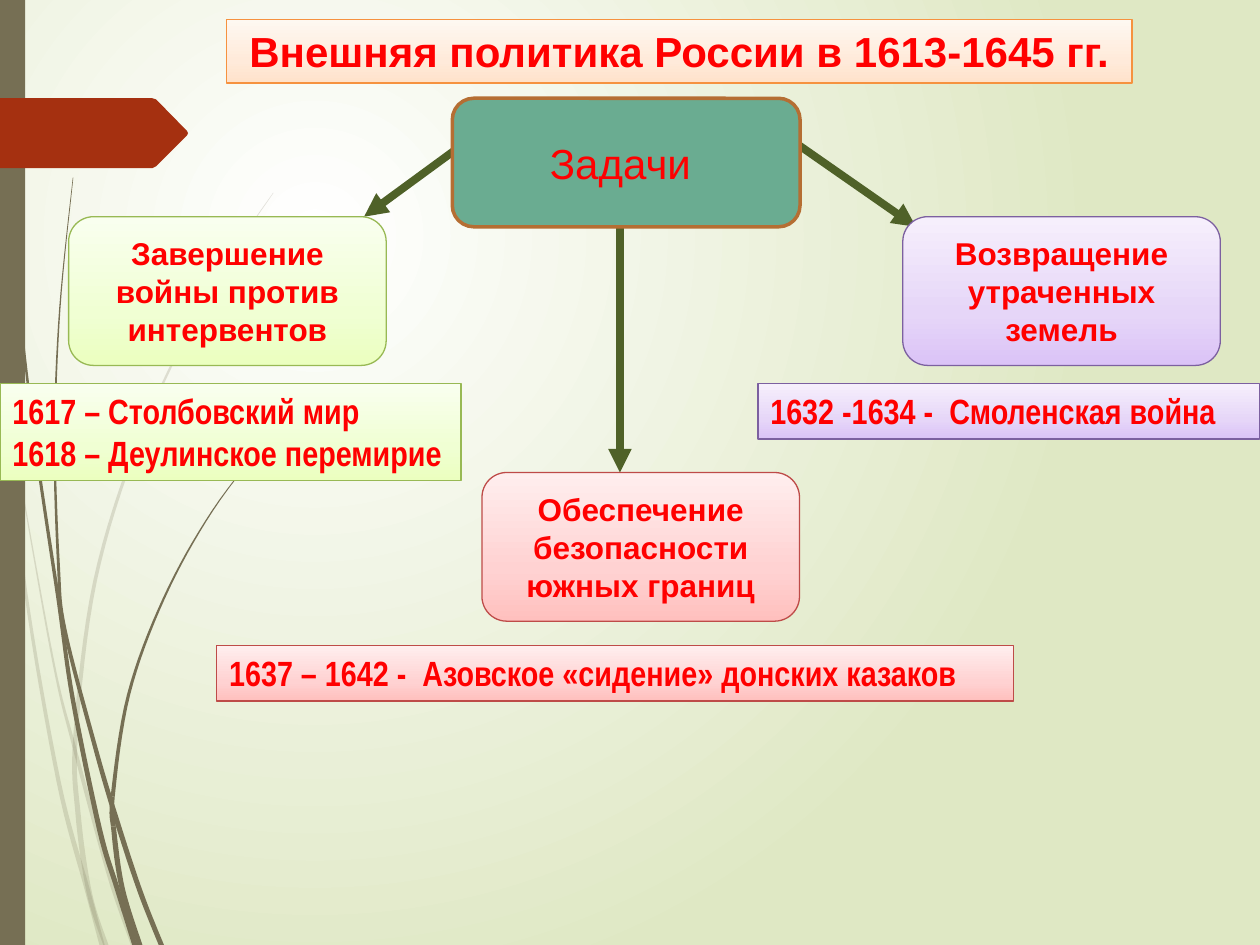
import dataclasses

import lxml.etree
import pptx
import pptx.dml.color
import pptx.enum.shapes
import pptx.enum.text
import pptx.oxml.ns
import pptx.util

SHAPES = pptx.enum.shapes.MSO_SHAPE
ALIGN = pptx.enum.text.PP_ALIGN
ANCHOR = pptx.enum.text.MSO_ANCHOR
COLUMN = pptx.util.Inches(0.1)  # the grid has 100 columns and 75 square rows


@dataclasses.dataclass(frozen=True)
class Palette:
    """Gradient stops from bottom to top, and the outline colour."""
    stops: tuple
    line: str


@dataclasses.dataclass(frozen=True)
class Theme:
    font: str = "Arial"
    narrow_font: str = "Arial Narrow"
    heading_size: int = 24
    event_size: int = 20
    task_size: int = 18
    text: str = "FF0000"
    background: tuple = ((0, "FFFFFF"), (100, "DFE8C4"))
    wisp: str = "766F54"
    tag: str = "A53010"
    arrow: str = "4F6128"
    root_fill: str = "6AAC91"
    root_line: str = "B56E33"
    orange: Palette = Palette(((0, "FFE2CA"), (35, "FFEADA"), (100, "FEF8F1")), "F6923F")
    green: Palette = Palette(((0, "EBFFBF"), (35, "F0FFD3"), (100, "F9FFEF")), "98B954")
    purple: Palette = Palette(((0, "DBC3F7"), (35, "E6D6F8"), (100, "F6EFFC")), "7C60A0")
    red: Palette = Palette(((0, "FFC0BE"), (35, "FFD2D2"), (100, "FFEEEE")), "BE4B48")


THEME = Theme()


@dataclasses.dataclass(frozen=True)
class Box:
    """A rectangle in grid columns and rows."""
    left: float
    top: float
    width: float
    height: float

    def inside(self, left, top, width, height):
        return Box(self.left + left, self.top + top, width, height)

    def point(self, x, y):
        return round((self.left + x) * COLUMN), round((self.top + y) * COLUMN)

    def lengths(self):
        return [round(n * COLUMN) for n in (self.left, self.top, self.width, self.height)]


def rgb(color):
    return pptx.dml.color.RGBColor.from_string(color)


def add_child(parent, tag, **attributes):
    child = lxml.etree.SubElement(parent, pptx.oxml.ns.qn(tag))
    for name, value in attributes.items():
        child.set(name, str(value))
    return child


def set_gradient(fill, owner, stops, radial=False):
    """Give the fill its stops: upwards, or round a centre in the upper left."""
    fill.gradient()
    gradient = next(owner.iter(pptx.oxml.ns.qn("a:gradFill")))
    for child in list(gradient):
        gradient.remove(child)
    stop_list = add_child(gradient, "a:gsLst")
    for position, color in stops:
        stop = add_child(stop_list, "a:gs", pos=position * 1000)
        add_child(stop, "a:srgbClr", val=color)
    if radial:
        circle = add_child(gradient, "a:path", path="circle")
        add_child(circle, "a:fillToRect", l=50000, t=50000, r=100000, b=100000)
    else:
        add_child(gradient, "a:lin", ang=270 * 60000, scaled=1)


def set_solid(shape, color, opacity=100):
    shape.shadow.inherit = False
    shape.line.fill.background()
    shape.fill.solid()
    shape.fill.fore_color.rgb = rgb(color)
    if opacity < 100:
        fill_color = next(shape.element.spPr.iter(pptx.oxml.ns.qn("a:srgbClr")))
        add_child(fill_color, "a:alpha", val=opacity * 1000)


def add_panel(slide, box, kind, palette):
    shape = slide.shapes.add_shape(kind, *box.lengths())
    shape.shadow.inherit = False
    set_gradient(shape.fill, shape.element, palette.stops)
    shape.line.color.rgb = rgb(palette.line)
    shape.line.width = pptx.util.Pt(0.75)
    return shape


def write(shape, text, size, bold=True, font=THEME.font, align=ALIGN.CENTER, anchor=ANCHOR.MIDDLE):
    frame = shape.text_frame
    frame.word_wrap = True
    frame.vertical_anchor = anchor
    frame.text = text
    for paragraph in frame.paragraphs:
        paragraph.alignment = align
        for run in paragraph.runs:
            run.font.name = font
            run.font.size = pptx.util.Pt(size)
            run.font.bold = bold
            run.font.color.rgb = rgb(THEME.text)


def draw_outline(slide, box, points, color, opacity=100):
    corners = [box.point(*point) for point in points]
    builder = slide.shapes.build_freeform(*corners[0])
    builder.add_line_segments(corners[1:], close=True)
    set_solid(builder.convert_to_shape(), color, opacity)


def smooth(points, steps=8):
    """Catmull-Rom curve through the points."""
    padded = [points[0], *points, points[-1]]
    curve = []
    for a, b, c, d in zip(padded, padded[1:], padded[2:], padded[3:]):
        for step in range(steps):
            t = step / steps
            curve.append(tuple(
                b[i] + t * (c[i] - a[i]) / 2
                + t ** 2 * (2 * a[i] - 5 * b[i] + 4 * c[i] - d[i]) / 2
                + t ** 3 * (3 * b[i] - a[i] - 3 * c[i] + d[i]) / 2
                for i in (0, 1)))
    return curve + [points[-1]]


def draw_wisp(slide, box, points, joints, widest, opacity):
    """A blade of grass that widens downwards, cut into pieces at the joint rows."""
    curve = smooth(points)
    halves = [widest / 2 * min(1, 0.1 + 1.2 * i / len(curve)) for i in range(len(curve))]
    cuts = [min(range(len(curve)), key=lambda i: abs(curve[i][1] - row)) for row in joints]
    for first, last in zip([0, *cuts], [*cuts, len(curve) - 1]):
        piece = list(zip(curve, halves))[first:last + 1]
        right = [(x + half, y) for (x, y), half in piece]
        left = [(x - half, y) for (x, y), half in piece]
        draw_outline(slide, box, right + left[::-1], THEME.wisp, opacity)


def draw_backdrop(slide, box):
    set_gradient(slide.background.fill, slide.element, THEME.background, radial=True)
    wisps = (
        (20, (35, 71.4), [(0.1, 29), (0.8, 34.6), (2.05, 47), (4.65, 62), (6.9, 70.5), (8.1, 75)]),
        (20, (59.7,), [(1, 34.5), (4.15, 52.1), (5.9, 59.3), (8.65, 69.3), (10.6, 75)]),
        (20, (58.6, 61, 71.1),
         [(21.7, 15.3), (18.65, 19.75), (15.85, 24.5), (11.05, 34.8), (7.55, 46.1),
          (6, 58.4), (6.2, 64.6), (7.1, 70.9), (8.4, 75)]),
        (100, (48, 72.2),
         [(0.25, 0), (0.55, 11), (1.45, 23.3), (2.85, 35.5), (4.65, 47.7), (5.8, 55.6),
          (7.9, 65.8), (9.3, 70.5), (10.7, 75)]),
        (100, (47.2, 64.3),
         [(5.8, 14.1), (4.75, 24.5), (4.35, 34.9), (4.65, 45), (5.15, 50), (7.5, 59.1),
          (9.2, 64.9), (11.1, 70.7), (12.8, 75)]),
        (100, (63.2, 65.5, 71.9),
         [(21.55, 34.4), (16.85, 40.55), (13, 47.5), (10.2, 55.15), (8.95, 63.2),
          (9.05, 66), (9.7, 70.5), (11.1, 75)]),
    )
    for opacity, joints, points in wisps:
        draw_wisp(slide, box, points, joints, 0.42, opacity)
    strip = slide.shapes.add_shape(SHAPES.RECTANGLE, *box.inside(0, 0, 2, box.height).lengths())
    set_solid(strip, THEME.wisp)
    tag_points = ((0, 0), (12.1, 0), (12.4, 0.1), (14.85, 2.6), (14.93, 2.77),
                  (14.85, 2.95), (12.4, 5.4), (12.1, 5.55), (0, 5.55))
    draw_outline(slide, box.inside(0, 7.8, 14.9, 5.55), tag_points, THEME.tag)


def draw_title(slide, box):
    panel = add_panel(slide, box, SHAPES.RECTANGLE, THEME.orange)
    write(panel, "Внешняя политика России в 1613-1645 гг.", THEME.heading_size, anchor=ANCHOR.TOP)


def draw_arrow(slide, start, end):
    arrow = slide.shapes.add_connector(pptx.enum.shapes.MSO_CONNECTOR.STRAIGHT, *start, *end)
    arrow.line.color.rgb = rgb(THEME.arrow)
    arrow.line.width = pptx.util.Pt(4.5)
    add_child(arrow.line._get_or_add_ln(), "a:tailEnd", type="triangle")
    add_child(arrow.element.spPr, "a:effectLst")


def draw_root(slide, box):
    root = slide.shapes.add_shape(SHAPES.ROUNDED_RECTANGLE, *box.lengths())
    set_solid(root, THEME.root_fill)
    root.line.color.rgb = rgb(THEME.root_line)
    root.line.width = pptx.util.Pt(2)
    write(root, "Задачи ", THEME.heading_size, bold=False)


def draw_task_tree(slide, box):
    """The root, three arrows, and under each a task with its events."""
    for start, end in (((49.2, 6.3), (49.2, 29.7)),
                       ((62.5, 3.1), (72.7, 10.2)),
                       ((37.5, 3.1), (28.9, 9.4))):
        draw_arrow(slide, box.point(*start), box.point(*end))
    draw_root(slide, box.inside(35.9, 0, 27.6, 10.2))
    branches = (
        (THEME.green, (5.45, 9.4), "Завершение войны против интервентов",
         (0, 22.65, 36.6, 7.7), "1617 – Столбовский мир\n1618 – Деулинское перемирие"),
        (THEME.purple, (71.65, 9.4), "Возвращение утраченных земель",
         (60.15, 22.65, 39.8, 4.4), "1632 -1634 -  Смоленская война"),
        (THEME.red, (38.25, 29.7), "Обеспечение безопасности южных границ",
         (17.2, 43.45, 63.25, 4.4), "1637 – 1642 -  Азовское «сидение» донских казаков"),
    )
    for palette, corner, task, event_place, events in branches:
        task_box = box.inside(*corner, 25.2, 11.8)
        write(add_panel(slide, task_box, SHAPES.ROUNDED_RECTANGLE, palette), task, THEME.task_size)
        panel = add_panel(slide, box.inside(*event_place), SHAPES.RECTANGLE, palette)
        write(panel, events, THEME.event_size, font=THEME.narrow_font,
              align=ALIGN.LEFT, anchor=ANCHOR.TOP)


def main():
    presentation = pptx.Presentation()
    page = Box(0, 0, 100, 75)
    _, _, presentation.slide_width, presentation.slide_height = page.lengths()
    slide = presentation.slides.add_slide(presentation.slide_layouts[6])
    draw_backdrop(slide, page)
    draw_title(slide, page.inside(17.95, 1.55, 71.9, 5.05))
    draw_task_tree(slide, page.inside(0, 7.8, 100, 48))
    presentation.save("out.pptx")


if __name__ == "__main__":
    main()
